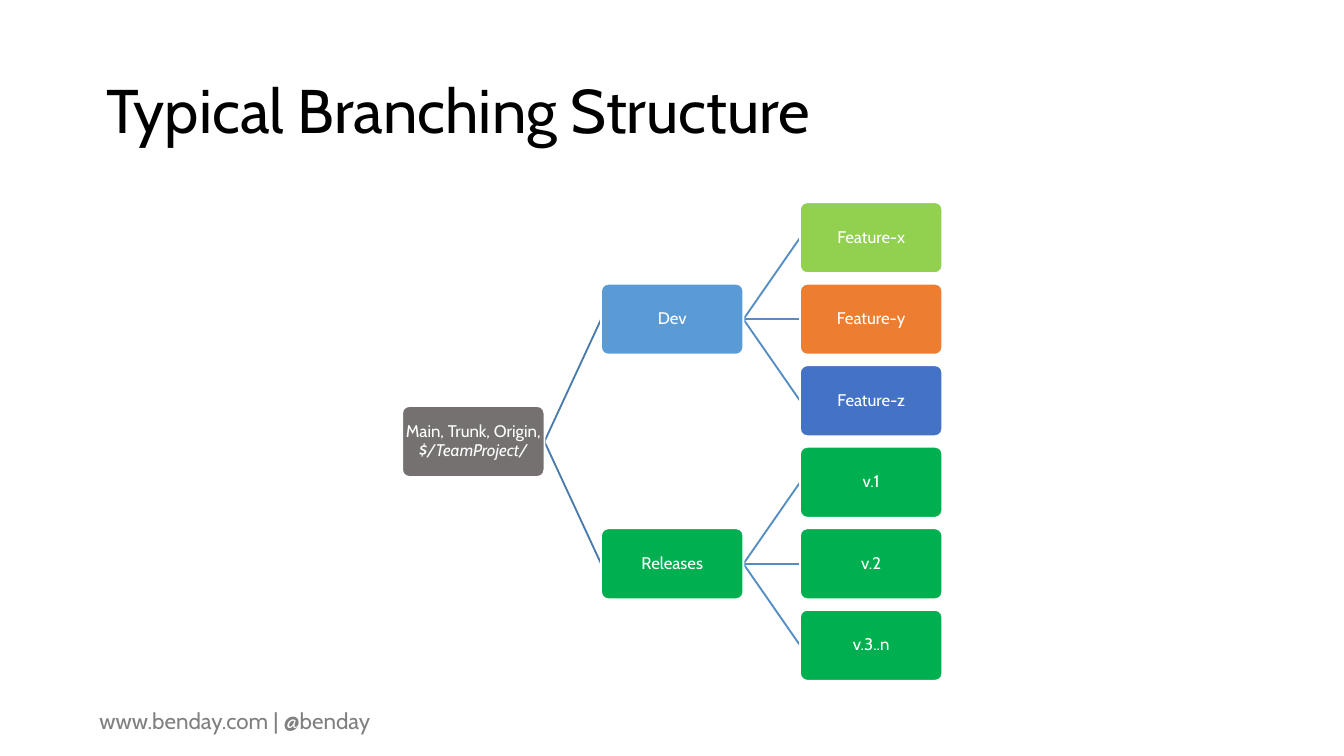
import pptx
import pptx.util
import pptx.dml.color
import pptx.enum.shapes
import pptx.enum.text
import pptx.oxml.ns
import lxml.etree
from pptx.util import Cm, Pt

# Content: name -> (text, parent, column, row, colour)
TITLE = "Typical Branching Structure"
FOOTER = "www.benday.com | @benday"
BRANCHES = {
    "main": ("Main, Trunk, Origin,\v$/TeamProject/", None, 0, 2.5, "gray"),
    "dev": ("Dev", "main", 1, 1, "blue"),
    "releases": ("Releases", "main", 1, 4, "green"),
    "x": ("Feature-x", "dev", 2, 0, "lime"),
    "y": ("Feature-y", "dev", 2, 1, "orange"),
    "z": ("Feature-z", "dev", 2, 2, "indigo"),
    "v1": ("v.1", "releases", 2, 3, "green"),
    "v2": ("v.2", "releases", 2, 4, "green"),
    "v3": ("v.3..n", "releases", 2, 5, "green"),
}
COLORS = {
    "gray": "767171", "blue": "5B9BD5", "green": "00B050", "lime": "92D050",
    "orange": "ED7D31", "indigo": "4472C4", "white": "FFFFFF",
    "black": "000000", "footer": "808080",
    "trunk line": "497CAB", "branch line": "538DC1",
}
FONT = "Cabin"

# Grid, in centimetres
LEFT, TOP = 7.6, 3.82
COLUMN_STEP, ROW_STEP = 3.76, 1.54
NODE_WIDTH, NODE_HEIGHT = 2.69, 1.34


def rgb(name):
    return pptx.dml.color.RGBColor.from_string(COLORS[name])


def style_text(para, size, color):
    for run in para.runs:
        run.font.name = FONT
        run.font.size = Pt(size)
        run.font.color.rgb = rgb(color)


def node_corner(name):
    column, row = BRANCHES[name][2:4]
    return LEFT + column * COLUMN_STEP, TOP + row * ROW_STEP


def add_branch_line(slide, parent, child):
    start_x, start_y = node_corner(parent)
    end_x, end_y = node_corner(child)
    middle = NODE_HEIGHT / 2
    line = slide.shapes.add_connector(
        pptx.enum.shapes.MSO_CONNECTOR.STRAIGHT,
        Cm(start_x + NODE_WIDTH), Cm(start_y + middle), Cm(end_x), Cm(end_y + middle))
    line.line.width = Pt(1)
    line.line.color.rgb = rgb("trunk line" if parent == "main" else "branch line")
    lxml.etree.SubElement(line._element.spPr, pptx.oxml.ns.qn("a:effectLst"))


def add_node(slide, name):
    text, color = BRANCHES[name][0], BRANCHES[name][4]
    x, y = node_corner(name)
    node = slide.shapes.add_shape(
        pptx.enum.shapes.MSO_SHAPE.ROUNDED_RECTANGLE,
        Cm(x), Cm(y), Cm(NODE_WIDTH), Cm(NODE_HEIGHT))
    node.adjustments[0] = 0.1
    node.shadow.inherit = False
    node.fill.solid()
    node.fill.fore_color.rgb = rgb(color)
    node.line.color.rgb = rgb("white")
    node.line.width = Pt(1)
    frame = node.text_frame
    frame.margin_left = frame.margin_right = Cm(0.03)
    frame.margin_top = frame.margin_bottom = Cm(0.03)
    frame.word_wrap = False
    frame.vertical_anchor = pptx.enum.text.MSO_ANCHOR.MIDDLE
    para = frame.paragraphs[0]
    para.text = text
    para.alignment = pptx.enum.text.PP_ALIGN.CENTER
    para.line_spacing = 0.9
    style_text(para, 9, "white")
    for run in para.runs[1:]:
        run.font.italic = True


def main():
    deck = pptx.Presentation()
    deck.slide_width, deck.slide_height = Cm(25.4), Cm(14.28)
    slide = deck.slides.add_slide(deck.slide_layouts[5])

    # Title
    title = slide.shapes.title
    title.left, title.top, title.width, title.height = Cm(1.75), Cm(0.76), Cm(21.9), Cm(2.77)
    title.text_frame.text = TITLE
    title.text_frame.vertical_anchor = pptx.enum.text.MSO_ANCHOR.MIDDLE
    para = title.text_frame.paragraphs[0]
    para.alignment = pptx.enum.text.PP_ALIGN.LEFT
    para.line_spacing = 0.9
    style_text(para, 33, "black")

    # Branch tree: lines behind, nodes in front
    for name, branch in BRANCHES.items():
        if branch[1]:
            add_branch_line(slide, branch[1], name)
    for name in BRANCHES:
        add_node(slide, name)

    # Footer
    footer = slide.shapes.add_textbox(Cm(1.63), Cm(13.23), Cm(5.92), Cm(0.76))
    footer.text_frame.text = FOOTER
    footer.text_frame.word_wrap = False
    style_text(footer.text_frame.paragraphs[0], 12, "footer")

    deck.save("out.pptx")


if __name__ == "__main__":
    main()
